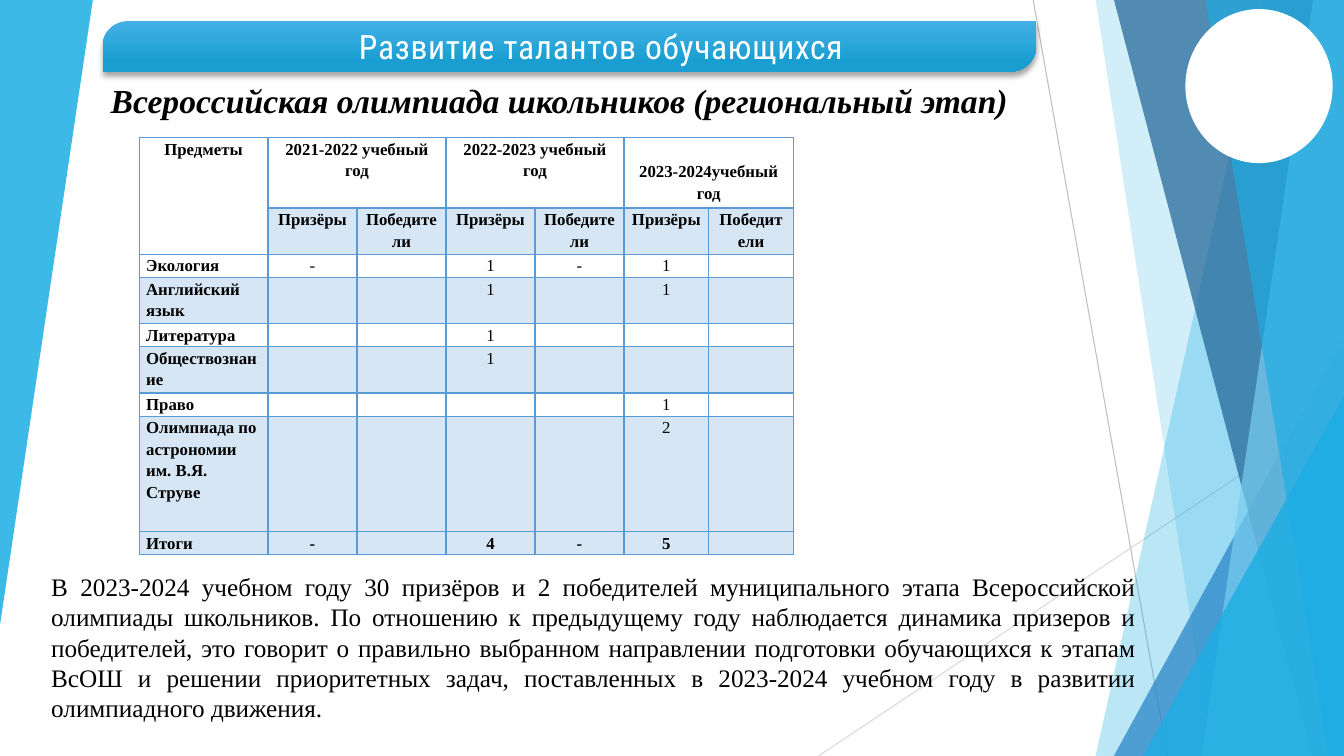
from lxml import etree
from pptx import Presentation
from pptx.dml.color import RGBColor
from pptx.enum.shapes import MSO_CONNECTOR, MSO_SHAPE
from pptx.enum.text import MSO_ANCHOR, PP_ALIGN
from pptx.oxml.ns import qn
from pptx.util import Pt

STRAIGHT = MSO_CONNECTOR.STRAIGHT
TRIANGLE, ELLIPSE = MSO_SHAPE.RIGHT_TRIANGLE, MSO_SHAPE.OVAL
TRIANGLE = MSO_SHAPE.ISOSCELES_TRIANGLE
BANNER = MSO_SHAPE.ROUND_2_DIAG_RECTANGLE
LEFT, CENTER, JUSTIFY = PP_ALIGN.LEFT, PP_ALIGN.CENTER, PP_ALIGN.JUSTIFY
TOP, MIDDLE = MSO_ANCHOR.TOP, MSO_ANCHOR.MIDDLE

WHITE = RGBColor(0xFF, 0xFF, 0xFF)
BLACK = RGBColor(0x00, 0x00, 0x00)
CYAN = RGBColor(0x1C, 0xAD, 0xE4)
PALE_CYAN = RGBColor(0x77, 0xCE, 0xEF)
BLUE = RGBColor(0x26, 0x83, 0xC6)
NAVY = RGBColor(0x1D, 0x62, 0x94)
GREY = RGBColor(0xBF, 0xBF, 0xBF)
LIGHT_GREY = RGBColor(0xD9, 0xD9, 0xD9)
BANNER_TOP = RGBColor(0x43, 0xB1, 0xE5)
BANNER_BOTTOM = RGBColor(0x1A, 0x9E, 0xD1)
BAND = RGBColor(0xD6, 0xE6, 0xF4)
BORDER = RGBColor(0x5B, 0x9B, 0xD5)

SERIF, CONDENSED = "Times New Roman", "Roboto Condensed"
WIDTH, HEIGHT = 960, 540

RESULTS = [
    ["Предметы", "2021-2022 учебный год", "", "2022-2023 учебный год", "",
     "2023-2024учебный год", ""],
    [""] + ["Призёры", "Победители"] * 3,
    ["Экология", "-", "", "1", "-", "1", ""],
    ["Английский язык", "", "", "1", "", "1", ""],
    ["Литература", "", "", "1", "", "", ""],
    ["Обществознание", "", "", "1", "", "", ""],
    ["Право", "", "", "", "", "1", ""],
    ["Олимпиада по астрономии им. В.Я. Струве", "", "", "", "", "2", ""],
    ["Итоги", "-", "", "4", "-", "5", ""],
]
COLUMN_WIDTHS = [92, 63.6, 63.6, 63.6, 63.6, 60.5, 60.5]
ROW_HEIGHTS = [50.2, 33, 16.6, 33, 16.6, 33, 16.6, 82.4, 16.6]
BANDED_ROWS = {1, 3, 5, 7, 8}
LAST_ROW = len(RESULTS) - 1
SUMMARY = (
    "В 2023-2024 учебном году 30 призёров и 2 победителей муниципального этапа "
    "Всероссийской олимпиады школьников. По отношению к предыдущему году "
    "наблюдается динамика призеров и победителей, это говорит о правильно "
    "выбранном направлении подготовки обучающихся к этапам ВсОШ и решении "
    "приоритетных задач, поставленных в 2023-2024 учебном году в развитии "
    "олимпиадного движения."
)


class SlideBuilder:
    def __init__(self, slide):
        self.slide = slide
        self.shapes = slide.shapes

    def line(self, start, end, color):
        line = self.shapes.add_connector(STRAIGHT, *map(Pt, start + end))
        line.line.color.rgb = color
        line.line.width = Pt(0.75)
        etree.SubElement(line._element.spPr, qn("a:effectLst"))

    def paint(self, shape, color, opacity):
        shape.shadow.inherit = False
        shape.line.fill.background()
        shape.fill.solid()
        shape.fill.fore_color.rgb = color
        if opacity < 100:
            rgb = shape._element.spPr.find(".//" + qn("a:srgbClr"))
            etree.SubElement(rgb, qn("a:alpha"), val=str(opacity * 1000))

    def facet(self, top_left, bottom_left, color, opacity):
        """Full-height band from a slanted left edge to the right slide edge."""
        outline = self.shapes.build_freeform(Pt(top_left), Pt(-0.6))
        corners = [(WIDTH, -0.6), (WIDTH, HEIGHT), (bottom_left, HEIGHT)]
        outline.add_line_segments([(Pt(x), Pt(y)) for x, y in corners])
        self.paint(outline.convert_to_shape(), color, opacity)

    def shape(self, kind, box, color, opacity=100):
        shape = self.shapes.add_shape(kind, *map(Pt, box))
        self.paint(shape, color, opacity)
        return shape

    def triangle(self, box, color, opacity, rotation=0):
        triangle = self.shape(TRIANGLE, box, color, opacity)
        triangle.adjustments[0] = 1
        triangle.rotation = rotation

    def banner(self, box):
        banner = self.shape(BANNER, box, BANNER_TOP)
        banner.adjustments[0], banner.adjustments[1] = 0.5, 0
        banner.fill.gradient()
        banner.fill.gradient_angle = 270
        top, bottom = banner.fill.gradient_stops
        top.color.rgb, top.position = BANNER_TOP, 0
        bottom.color.rgb, bottom.position = BANNER_BOTTOM, 0.78
        effects = banner._element.spPr.find(qn("a:effectLst"))
        shadow = etree.SubElement(
            effects, qn("a:outerShdw"), blurRad=str(Pt(4)), dist=str(Pt(3)),
            dir="5400000", algn="ctr", rotWithShape="0")
        black = etree.SubElement(shadow, qn("a:srgbClr"), val=str(BLACK))
        etree.SubElement(black, qn("a:alpha"), val="35000")

    def style(self, paragraph, size, color=BLACK, font=SERIF, align=LEFT,
              bold=False, italic=False):
        paragraph.alignment = align
        paragraph.font.name = font
        paragraph.font.size = Pt(size)
        paragraph.font.color.rgb = color
        paragraph.font.bold, paragraph.font.italic = bold, italic

    def title(self, text, box):
        title = self.shapes.title
        title.left, title.top, title.width, title.height = map(Pt, box)
        self.shapes._spTree.append(title._element)  # in front of the banner
        frame = title.text_frame
        frame.text = text
        frame.word_wrap = False
        frame.vertical_anchor = MIDDLE
        heading = frame.paragraphs[0]
        self.style(heading, 24, WHITE, CONDENSED, CENTER)
        heading.runs[0]._r.get_or_add_rPr().set("spc", "50")

    def text(self, text, box, size, **style):
        frame = self.shapes.add_textbox(*map(Pt, box)).text_frame
        frame.word_wrap = True
        frame.text = text
        self.style(frame.paragraphs[0], size, **style)

    def border(self, cell, side, width):
        edge = etree.SubElement(cell._tc.get_or_add_tcPr(), qn("a:ln" + side),
                                w=str(Pt(width)))
        fill = etree.SubElement(edge, qn("a:solidFill"))
        etree.SubElement(fill, qn("a:srgbClr"), val=str(BORDER))

    def cell(self, cell, text, row, column):
        cell.margin_left = cell.margin_right = Pt(5)
        cell.margin_top = cell.margin_bottom = 0
        cell.vertical_anchor = TOP
        cell.text = text
        entry = cell.text_frame.paragraphs[0]
        entry.line_spacing = 1.15
        self.style(entry, 12, align=CENTER if column or row == 0 else LEFT,
                   bold=column == 0 or row in (0, 1, LAST_ROW))
        for side in "LRTB":
            thick = column and (row, side) in ((0, "B"), (1, "T"))
            self.border(cell, side, 2.25 if thick else 1)
        if row in BANDED_ROWS and (row, column) != (1, 0):
            cell.fill.solid()
            cell.fill.fore_color.rgb = BAND
        else:
            cell.fill.background()

    def table(self, rows, left, top):
        table = self.shapes.add_table(
            len(rows), len(rows[0]), Pt(left), Pt(top),
            Pt(sum(COLUMN_WIDTHS)), Pt(sum(ROW_HEIGHTS))).table
        table.first_row = table.horz_banding = False
        for column, width in zip(table.columns, COLUMN_WIDTHS):
            column.width = Pt(width)
        for row, height in zip(table.rows, ROW_HEIGHTS):
            row.height = Pt(height)
        for r, row in enumerate(rows):
            for c, text in enumerate(row):
                self.cell(table.cell(r, c), text, r, c)
        table.cell(0, 0).merge(table.cell(1, 0))
        for c in (1, 3, 5):
            table.cell(0, c).merge(table.cell(0, c + 1))
        table.cell(0, 5).margin_top = Pt(15.9)


def main():
    deck = Presentation()
    deck.slide_width, deck.slide_height = Pt(WIDTH), Pt(HEIGHT)
    builder = SlideBuilder(deck.slides.add_slide(deck.slide_layouts[5]))

    builder.line((738, 0), (834, HEIGHT), GREY)
    builder.line((WIDTH, 290), (584.6, HEIGHT), LIGHT_GREY)
    builder.facet(903, 782.6, CYAN, 30)
    builder.facet(782.6, 865.4, CYAN, 20)
    builder.triangle((795.6, 240, 164.4, 300), BLUE, 72)
    builder.facet(795.6, 937.4, NAVY, 70)
    builder.facet(938, 858.2, PALE_CYAN, 70)
    builder.facet(861, 949, CYAN, 65)
    builder.triangle((816.5, 283, 143.5, 257), CYAN, 80)
    builder.triangle((0, 0, 66.3, 446.4), CYAN, 85, rotation=180)
    builder.shape(ELLIPSE, (846.7, 6.5, 105.2, 110), WHITE)

    builder.text(SUMMARY, (29.5, 404.6, 789, 116.6), 18, align=JUSTIFY)
    builder.text("Всероссийская олимпиада школьников (региональный этап)",
                 (72, 53.3, 699, 36), 24, bold=True, italic=True)
    builder.banner((73.4, 15.1, 666.7, 36))
    builder.title("Развитие талантов обучающихся", (239, 15.1, 381, 36))
    builder.table(RESULTS, 99.4, 98.4)

    deck.save("out.pptx")


if __name__ == "__main__":
    main()
